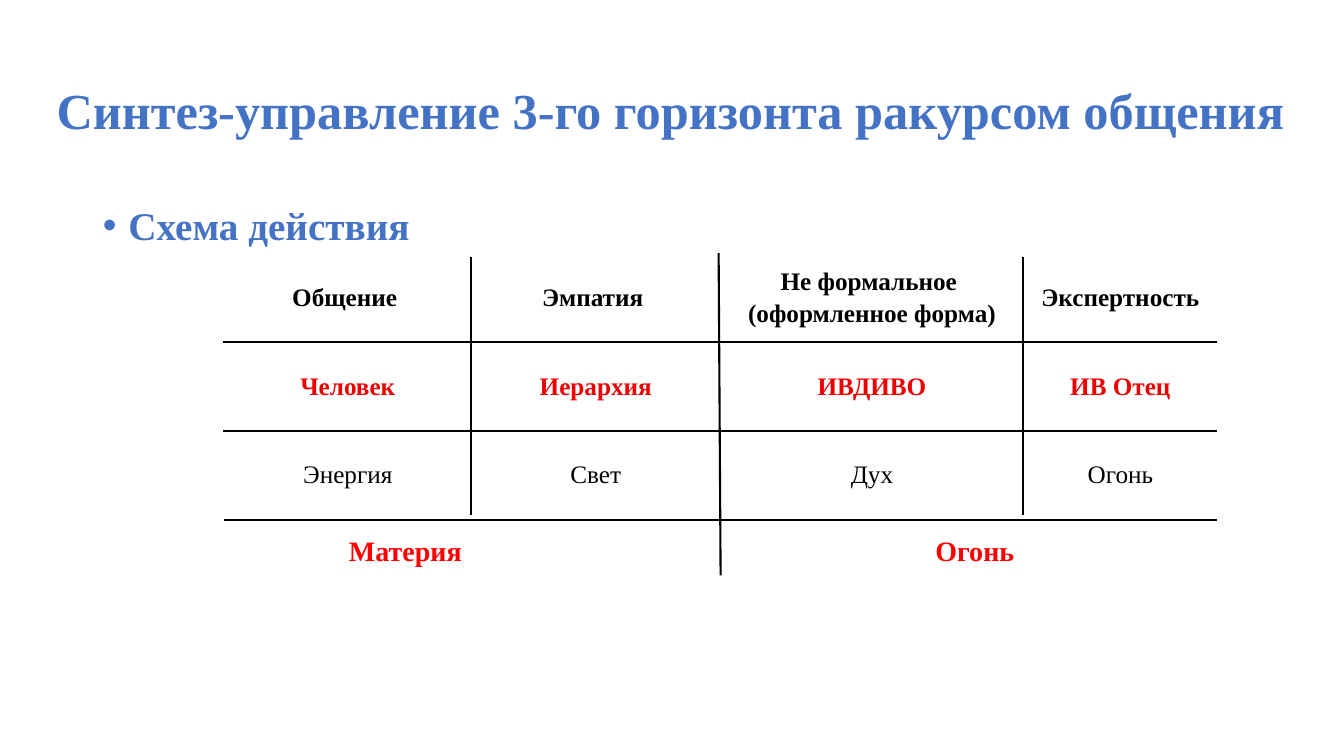
from dataclasses import dataclass

from lxml.etree import SubElement
from pptx import Presentation
from pptx.dml.color import RGBColor
from pptx.enum.shapes import MSO_CONNECTOR
from pptx.enum.text import MSO_ANCHOR, MSO_AUTO_SIZE, PP_ALIGN
from pptx.oxml.ns import qn
from pptx.util import Cm, Pt

FONT = "Times New Roman"
COLORS = {"blue": "4472C4", "black": "000000", "white": "FFFFFF",
          "crimson": "EE0000", "red": "FF0000"}
LEFT, TOP = 5.64, 6.38
COL_WIDTHS = [6.25, 6.25, 7.67, 4.85]


@dataclass
class Row:
    texts: list[str]
    color: str
    bold: bool
    size: int
    height: float
    align: PP_ALIGN
    anchor: MSO_ANCHOR
    margin_x: float
    margin_top: float
    top_line: str
    bottom_line: str


@dataclass
class Rule:
    x1: float
    y1: float
    x2: float
    y2: float


ROWS = [
    Row(["Общение ", "Эмпатия ", "Не формальное \n(оформленное форма)", "Экспертность"],
        "black", True, 18, 2.24, PP_ALIGN.CENTER, MSO_ANCHOR.MIDDLE, 0.19, 0, "white", "black"),
    Row(["Человек", "Иерархия", "ИВДИВО", "ИВ Отец"],
        "crimson", True, 18, 2.24, PP_ALIGN.CENTER, MSO_ANCHOR.MIDDLE, 0.19, 0, "black", "black"),
    Row(["Энергия", "Свет", "Дух", "Огонь"],
        "black", False, 18, 2.24, PP_ALIGN.CENTER, MSO_ANCHOR.MIDDLE, 0.19, 0, "black", "white"),
    Row(["Материя", "", "Огонь", ""],
        "red", True, 20, 1.42, PP_ALIGN.RIGHT, MSO_ANCHOR.TOP, 0.25, 0.43, "white", "white"),
]

RULES = [
    Rule(5.64, 13.11, 30.66, 13.11),
    Rule(18.11, 6.38, 18.16, 14.5),
    Rule(11.86, 6.48, 11.86, 12.98),
    Rule(25.78, 6.48, 25.78, 12.98),
]


def rgb(name: str) -> RGBColor:
    return RGBColor.from_string(COLORS[name])


def add_run(p, text: str, size: float, color: str, bold: bool) -> None:
    r = p.add_run()
    r.text = text
    r.font.name = FONT
    r.font.size = Pt(size)
    r.font.bold = bold
    r.font.color.rgb = rgb(color)


def fill_placeholder(sp, box: tuple, text: str, size: float, anchor: MSO_ANCHOR):
    sp.left, sp.top, sp.width, sp.height = map(Cm, box)
    tf = sp.text_frame
    tf.word_wrap = True
    tf.auto_size = MSO_AUTO_SIZE.NONE
    tf.vertical_anchor = anchor
    p = tf.paragraphs[0]
    p.alignment = PP_ALIGN.LEFT
    p.line_spacing = 0.9
    p.space_before = Pt(0)
    add_run(p, text, size, "blue", True)
    return p


def add_bullet(p) -> None:
    pPr = p._p.get_or_add_pPr()
    pPr.set("marL", str(Cm(0.64)))
    pPr.set("indent", str(Cm(-0.64)))
    SubElement(pPr, qn("a:buFont"), typeface="Arial")
    SubElement(pPr, qn("a:buChar"), char="•")


def set_borders(cell, row: Row) -> None:
    tcPr = cell._tc.get_or_add_tcPr()
    sides = {"L": "white", "R": "white", "T": row.top_line, "B": row.bottom_line}
    for side, color in sides.items():
        ln = SubElement(tcPr, qn(f"a:ln{side}"), w=str(Pt(1)))
        fill = SubElement(ln, qn("a:solidFill"))
        SubElement(fill, qn("a:srgbClr"), val=COLORS[color])


def fill_cell(cell, row: Row, text: str) -> None:
    set_borders(cell, row)
    cell.fill.solid()
    cell.fill.fore_color.rgb = rgb("white")
    cell.vertical_anchor = row.anchor
    cell.margin_left = cell.margin_right = Cm(row.margin_x)
    cell.margin_top, cell.margin_bottom = Cm(row.margin_top), Cm(0)
    if not text:
        return
    tf = cell.text_frame
    for i, line in enumerate(text.split("\n")):
        p = tf.add_paragraph() if i else tf.paragraphs[0]
        p.alignment = row.align
        p.space_before = Pt(3 if i else 0)
        add_run(p, line, row.size, row.color, row.bold)


def add_scheme(s) -> None:
    height = sum(row.height for row in ROWS)
    table = s.shapes.add_table(len(ROWS), len(COL_WIDTHS), Cm(LEFT), Cm(TOP),
                               Cm(sum(COL_WIDTHS)), Cm(height)).table
    table.first_row = table.horz_banding = False
    for col, width in zip(table.columns, COL_WIDTHS):
        col.width = Cm(width)
    for i, row in enumerate(ROWS):
        table.rows[i].height = Cm(row.height)
        for j, text in enumerate(row.texts):
            fill_cell(table.cell(i, j), row, text)


def add_rule(s, rule: Rule) -> None:
    cx = s.shapes.add_connector(MSO_CONNECTOR.STRAIGHT, Cm(rule.x1), Cm(rule.y1),
                                Cm(rule.x2), Cm(rule.y2))
    cx.line.color.rgb = rgb("black")
    cx.line.width = Pt(1.5)
    SubElement(cx._element.spPr, qn("a:effectLst"))


def main() -> None:
    prs = Presentation()
    prs.slide_width, prs.slide_height = Cm(33.87), Cm(19.05)
    s = prs.slides.add_slide(prs.slide_layouts[1])
    fill_placeholder(s.shapes.title, (1.17, 1.02, 31.75, 3.68),
                     "Синтез-управление 3-го горизонта ракурсом общения", 36, MSO_ANCHOR.MIDDLE)
    p = fill_placeholder(s.placeholders[1], (2.34, 5.08, 29.21, 12.09),
                         "Схема действия", 28, MSO_ANCHOR.TOP)
    add_bullet(p)
    add_scheme(s)
    for rule in RULES:
        add_rule(s, rule)
    prs.save("out.pptx")


if __name__ == "__main__":
    main()
